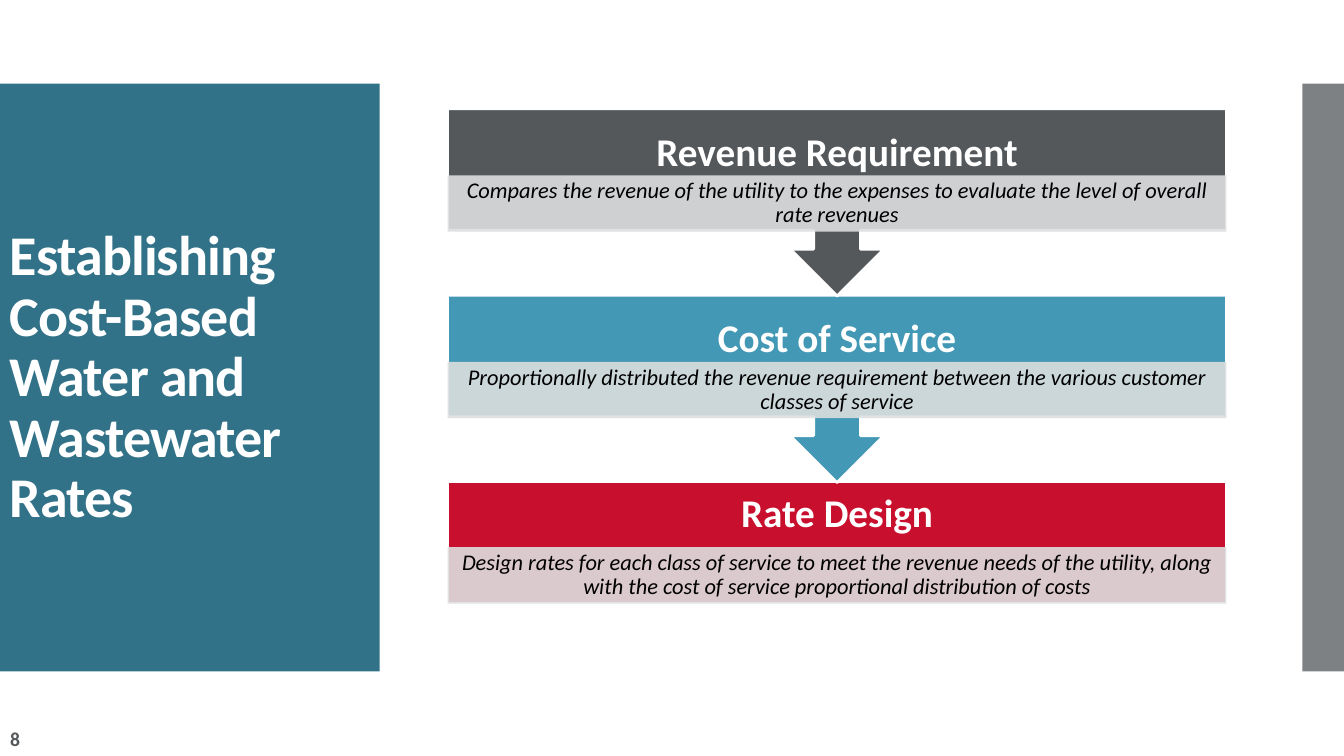
from dataclasses import dataclass

from lxml import etree
from pptx import Presentation
from pptx.dml.color import RGBColor
from pptx.enum.shapes import MSO_SHAPE
from pptx.enum.text import MSO_ANCHOR, MSO_AUTO_SIZE, PP_ALIGN
from pptx.oxml.ns import qn
from pptx.util import Cm, Pt

RECTANGLE = MSO_SHAPE.RECTANGLE
ARROW_CALLOUT = MSO_SHAPE.DOWN_ARROW_CALLOUT
MIDDLE = MSO_ANCHOR.MIDDLE
NO_FIT = MSO_AUTO_SIZE.NONE
LEFT, CENTER, RIGHT = PP_ALIGN.LEFT, PP_ALIGN.CENTER, PP_ALIGN.RIGHT

FONT = "Calibri"
WHITE, BLACK, GREY, PALE = "FFFFFF", "000000", "54585A", "DCDEDF"

# Measures of the step stack, in centimetres
STACK_LEFT, STACK_TOP, STACK_WIDTH = 11.28, 2.74, 19.63
STEP_PITCH = 4.7
CALLOUT_HEIGHT, LAST_HEIGHT = 4.72, 3.07
DETAIL_HEIGHT = 1.42


@dataclass
class Box:
    left: float
    top: float
    width: float
    height: float

    def lengths(self):
        return Cm(self.left), Cm(self.top), Cm(self.width), Cm(self.height)


@dataclass
class Step:
    heading: str
    detail: str
    color: str
    shape: MSO_SHAPE
    height: float
    heading_offset: float
    heading_height: float
    detail_offset: float


STEPS = [
    Step("Revenue Requirement",
         "Compares the revenue of the utility to the expenses to evaluate "
         "the level of overall rate revenues",
         GREY, ARROW_CALLOUT, CALLOUT_HEIGHT, 0.58, 1.1, 1.68),
    Step("Cost of Service",
         "Proportionally distributed the revenue requirement between "
         "the various customer classes of service",
         "4298B5", ARROW_CALLOUT, CALLOUT_HEIGHT, 0.58, 1.1, 1.68),
    Step("Rate Design",
         "Design rates for each class of service to meet the revenue needs of "
         "the utility, along with the cost of service proportional "
         "distribution of costs",
         "C8102E", RECTANGLE, LAST_HEIGHT, 0, 1.65, 1.65),
]


def rgb(value: str) -> RGBColor:
    return RGBColor.from_string(value)


def add_block(page, kind, box: Box, color: str, opacity: int = 100, outline: str = ""):
    block = page.shapes.add_shape(kind, *box.lengths())
    block.shadow.inherit = False
    block.fill.solid()
    block.fill.fore_color.rgb = rgb(color)
    if opacity < 100:
        color_node = block.fill._xPr.find(qn("a:solidFill"))[0]
        etree.SubElement(color_node, qn("a:alpha"), val=str(opacity * 1000))
    if outline:
        block.line.color.rgb = rgb(outline)
        block.line.width = Pt(2)
    else:
        block.line.fill.background()
    return block


def write(shape, text: str, size: float, color: str, align, bold: bool = False,
          italic: bool = False, spacing: float = 0.9, wrap: bool = True,
          margins: tuple = (0.25, 0.13)):
    frame = shape.text_frame
    frame.word_wrap = wrap
    frame.auto_size = NO_FIT
    frame.vertical_anchor = MIDDLE
    frame.margin_left = frame.margin_right = Cm(margins[0])
    frame.margin_top = frame.margin_bottom = Cm(margins[1])
    para = frame.paragraphs[0]
    para.alignment = align
    para.line_spacing = spacing
    span = para.add_run()
    span.text = text
    span.font.name = FONT
    span.font.size = Pt(size)
    span.font.bold = bold
    span.font.italic = italic
    span.font.color.rgb = rgb(color)
    return span


def add_step(page, step: Step, top: float):
    add_block(page, step.shape, Box(STACK_LEFT, top, STACK_WIDTH, step.height),
              step.color, outline=WHITE)
    heading = page.shapes.add_textbox(
        *Box(STACK_LEFT, top + step.heading_offset,
             STACK_WIDTH, step.heading_height).lengths())
    write(heading, step.heading, 28, WHITE, CENTER, bold=True, margins=(0.56, 0.56))
    detail = add_block(page, RECTANGLE,
                       Box(STACK_LEFT, top + step.detail_offset,
                           STACK_WIDTH, DETAIL_HEIGHT), PALE, opacity=90)
    write(detail, step.detail, 16, BLACK, CENTER, italic=True, margins=(0.3, 0.05))


def main():
    deck = Presentation()
    deck.slide_width, deck.slide_height = Cm(33.87), Cm(19.05)
    page = deck.slides.add_slide(deck.slide_layouts[5])

    # Side panels, kept behind the title
    title = page.shapes.title
    panels = [
        add_block(page, RECTANGLE, Box(0, 2.11, 9.57, 14.81), "327288"),
        add_block(page, RECTANGLE, Box(32.82, 2.11, 1.05, 14.81), GREY, opacity=75),
    ]
    for panel in panels:
        title._element.addprevious(panel._element)

    # Title
    title.left, title.top, title.width, title.height = Box(0, 2.08, 9.53, 14.91).lengths()
    span = write(title, "Establishing Cost-Based Water and Wastewater Rates",
                 40, WHITE, LEFT, bold=True)
    span.font._element.set("spc", "-60")

    # Steps, from the bottom up so that each arrow lies over the next block
    for index, step in reversed(list(enumerate(STEPS))):
        add_step(page, step, STACK_TOP + index * STEP_PITCH)

    # Page number
    number = page.shapes.add_textbox(*Box(0, 18.19, 0.76, 0.86).lengths())
    write(number, "8", 14, GREY, RIGHT, bold=True, spacing=1.0, wrap=False)

    deck.save("out.pptx")


if __name__ == "__main__":
    main()
